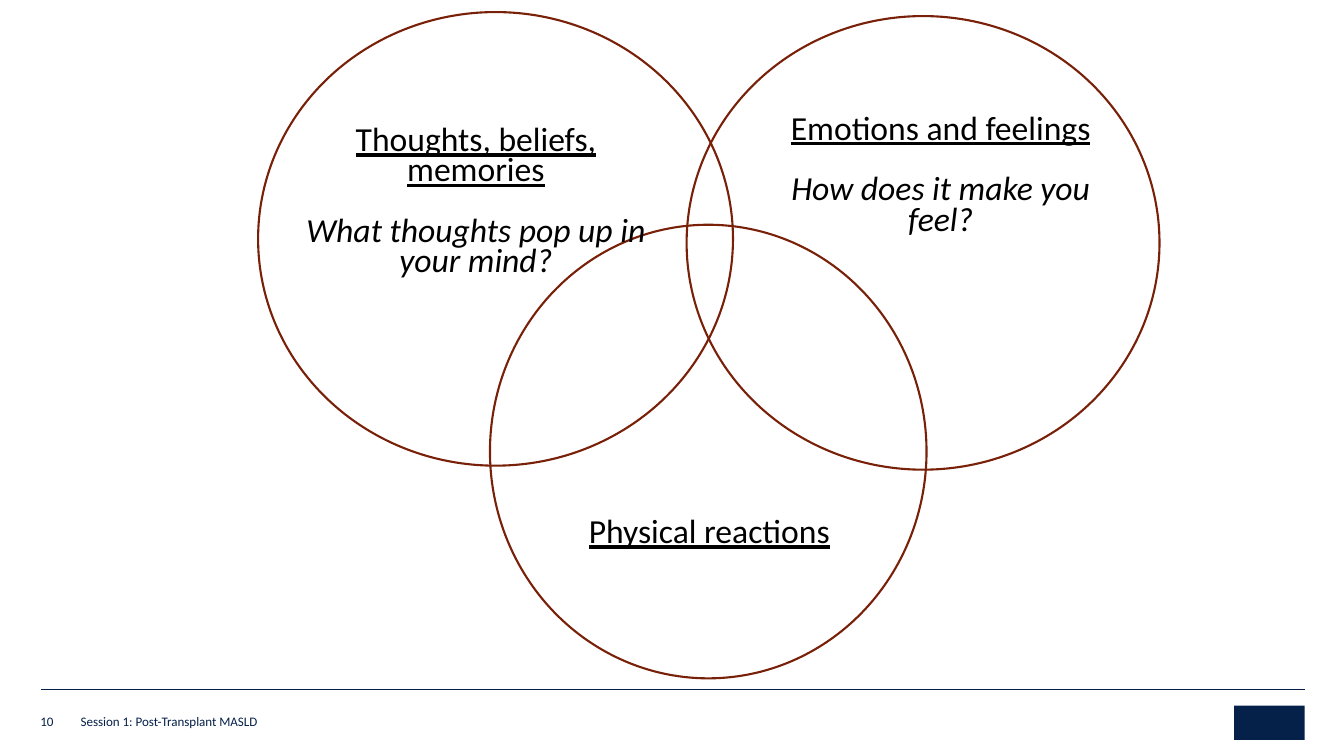
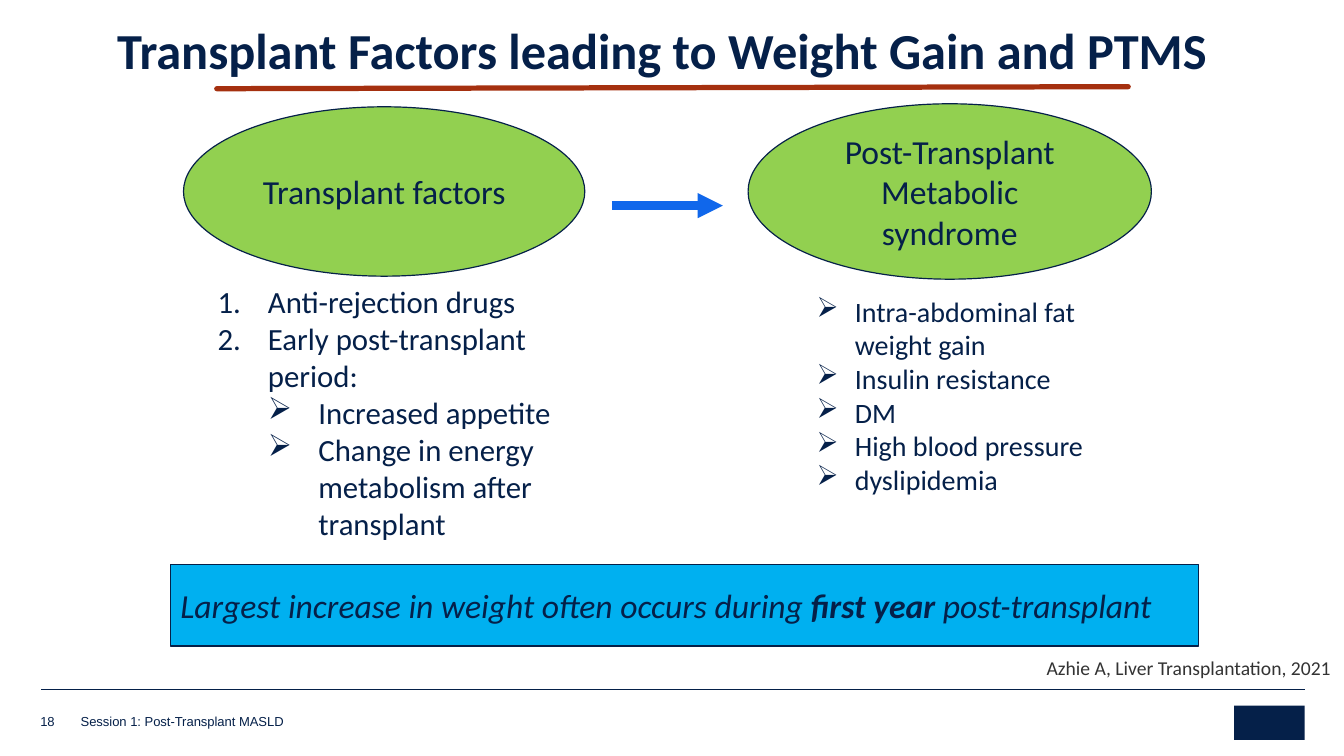
from dataclasses import dataclass, field

from pptx import Presentation
from pptx.dml.color import RGBColor
from pptx.enum.shapes import MSO_CONNECTOR, MSO_SHAPE
from pptx.enum.text import MSO_ANCHOR, PP_ALIGN
from pptx.oxml.ns import qn
from pptx.util import Emu, Pt
from lxml import etree

PX = 9144  # 100 px to the inch
LEFT, CENTER = PP_ALIGN.LEFT, PP_ALIGN.CENTER
TOP, MIDDLE, BOTTOM = MSO_ANCHOR.TOP, MSO_ANCHOR.MIDDLE, MSO_ANCHOR.BOTTOM
OVAL, RECT = MSO_SHAPE.OVAL, MSO_SHAPE.RECTANGLE
STRAIGHT = MSO_CONNECTOR.STRAIGHT


@dataclass(frozen=True)
class Theme:
    navy: str = "052049"
    black: str = "000000"
    gray: str = "333333"
    rust: str = "A5300F"
    maroon: str = "782008"
    green: str = "92D050"
    sky: str = "00B0F0"
    blue: str = "1067EB"
    font: str = "Calibri"
    footer_font: str = "Arial"
    title: float = 36
    body: float = 24
    numbered: float = 22
    bulleted: float = 20
    source: float = 14
    footer: float = 9.3


@dataclass
class Para:
    runs: list  # (text, font values) pairs
    marker: str = ""
    indent: tuple = (0, 0)
    layout: dict = field(default_factory=dict)


T = Theme()
FOOTER = "Session 1: Post-Transplant MASLD"


def px(n):
    return Emu(n * PX)


def rgb(color):
    return RGBColor.from_string(color)


def apply(target, values):
    for name, value in values.items():
        setattr(target, name, value)


def plain(text, **fmt):
    return Para([(text, fmt)])


def item(text, marker, left, hang):
    return Para([(text, {})], marker, (left, hang))


class Deck:
    def __init__(self):
        self.prs = Presentation()
        self.prs.slide_width, self.prs.slide_height = px(1333), px(750)
        self.s = None

    def slide(self, number, font=T.font):
        self.s = self.prs.slides.add_slide(self.prs.slide_layouts[6])
        self.line(41, 684, 1294, 684, T.navy, 0.25)
        self.shape(RECT, 1224, 700, 70, 34, fill=T.navy)
        style = dict(size=T.footer, font=font, anchor=BOTTOM, inset=(0, 0))
        self.text(80, 708, 629, 15, [plain(FOOTER)], **style)
        self.text(40, 706, 36, 17, [plain(str(number))], **style)

    def set_text(self, tf, paras, size=T.body, color=T.navy, font=T.font,
                 align=LEFT, anchor=TOP, inset=(10, 5), wrap=True):
        x, y = map(px, inset)
        apply(tf, dict(word_wrap=wrap, vertical_anchor=anchor, margin_left=x,
                       margin_right=x, margin_top=y, margin_bottom=y))
        for i, para in enumerate(paras):
            p = tf.add_paragraph() if i else tf.paragraphs[0]
            self.mark(p, para)
            apply(p, dict(alignment=align, **para.layout))
            for text, fmt in para.runs:
                r = p.add_run()
                r.text = text
                apply(r.font, dict(name=font, size=Pt(size), **fmt))
                r.font.color.rgb = rgb(color)

    def mark(self, p, para):
        if not para.marker:
            return
        pPr = p._p.get_or_add_pPr()
        left, hang = para.indent
        pPr.set("marL", str(px(left)))
        pPr.set("indent", str(px(-hang)))
        if para.marker == "1.":
            etree.SubElement(pPr, qn("a:buAutoNum"), type="arabicPeriod")
        else:
            etree.SubElement(pPr, qn("a:buChar"), char=para.marker)

    def text(self, x, y, w, h, paras, **style):
        box = self.s.shapes.add_textbox(*map(px, (x, y, w, h)))
        self.set_text(box.text_frame, paras, **style)

    def shape(self, kind, x, y, w, h, fill=None, line=None, width=0.85,
              paras=(), **style):
        sp = self.s.shapes.add_shape(kind, *map(px, (x, y, w, h)))
        sp.shadow.inherit = False
        if fill:
            sp.fill.solid()
            sp.fill.fore_color.rgb = rgb(fill)
        else:
            sp.fill.background()
        if line:
            sp.line.color.rgb = rgb(line)
            sp.line.width = Pt(width)
        else:
            sp.line.fill.background()
        if paras:
            self.set_text(sp.text_frame, paras, anchor=MIDDLE, **style)

    def line(self, x1, y1, x2, y2, color, width, arrow=False, cap="flat"):
        c = self.s.shapes.add_connector(STRAIGHT, *map(px, (x1, y1, x2, y2)))
        c.line.color.rgb = rgb(color)
        c.line.width = Pt(width)
        spPr = c._element.spPr
        ln = spPr.find(qn("a:ln"))
        ln.set("cap", cap)
        if arrow:
            etree.SubElement(ln, qn("a:tailEnd"), type="triangle")
        etree.SubElement(spPr, qn("a:effectLst"))

    def title(self, text):
        para = plain(text, bold=True)
        para.layout = dict(line_spacing=0.85)
        self.text(84, 23, 1146, 60, [para], size=T.title, align=CENTER)

    def venn_label(self, x, y, w, h, heading, question=""):
        paras = [plain(heading, underline=True)]
        if question:
            paras.append(plain(question, italic=True))
        for i, para in enumerate(paras):
            para.layout = dict(line_spacing=Pt(21.6), space_before=Pt(21.6 * i))
        self.text(x, y, w, h, paras, color=T.black, align=CENTER, inset=(0, 0))


def venn_slide(d):
    d.slide(10)
    # Three overlapping circles
    for x, y, w in ((256, 12, 471), (681, 16, 469), (486, 223, 433)):
        d.shape(OVAL, x, y, w, 450, line=T.maroon, width=1.5)
    # Labels
    d.venn_label(303, 127, 338, 155, "Thoughts, beliefs, memories",
                 "What thoughts pop up in your mind?")
    d.venn_label(781, 116, 304, 125, "Emotions and feelings",
                 "How does it make you feel?")
    d.venn_label(573, 516, 261, 32, "Physical reactions")


def factors_slide(d):
    d.slide(18, T.footer_font)
    d.title("Transplant Factors leading to Weight Gain and PTMS")
    d.line(215, 88, 1119, 86, T.rust, 3.75, cap="rnd")

    # Cause and effect
    for x, y, w, h, text in (
            (182, 106, 398, 168, "Transplant factors"),
            (742, 103, 400, 174, "Post-Transplant Metabolic syndrome")):
        d.shape(OVAL, x, y, w, h, fill=T.green, line=T.navy,
                paras=[plain(text)], align=CENTER)
    d.line(607, 204, 717, 204, T.blue, 6, arrow=True)

    # Lists under the ovals
    causes = [item(text, marker, left, 50) for text, marker, left in (
        ("Anti-rejection drugs", "1.", 50),
        ("Early post-transplant period:", "1.", 50),
        ("Increased appetite", "➢", 100),
        ("Change in energy metabolism after transplant", "➢", 100))]
    d.text(206, 276, 400, 269, causes, size=T.numbered)
    effects = [item(text, "➢", 38, 38) for text in (
        "Intra-abdominal fat weight gain", "Insulin resistance", "DM",
        "High blood pressure", "dyslipidemia")]
    d.text(800, 287, 308, 212, effects, size=T.bulleted)

    # Key message and source
    message = Para([
        ("Largest increase in weight often occurs during ", dict(italic=True)),
        ("first year", dict(italic=True, bold=True)),
        (" post-transplant", dict(italic=True))])
    d.shape(RECT, 169, 560, 1020, 81, fill=T.sky, line=T.navy, paras=[message])
    d.text(1038, 644, 290, 37, [plain("Azhie A, Liver Transplantation, 2021")],
           size=T.source, color=T.gray, anchor=MIDDLE, inset=(0, 0), wrap=False)


def main():
    d = Deck()
    venn_slide(d)
    factors_slide(d)
    d.prs.save("out.pptx")


if __name__ == "__main__":
    main()
